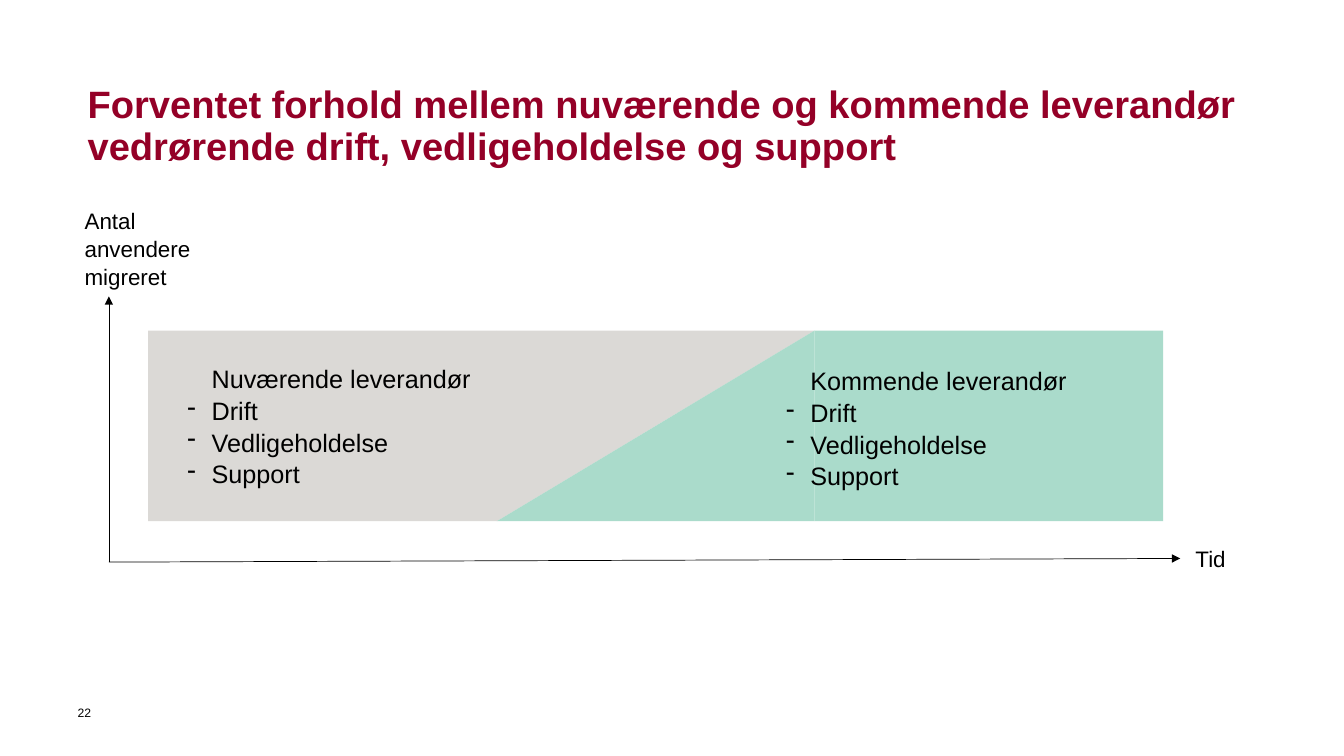
from dataclasses import dataclass

from lxml.etree import SubElement
from pptx import Presentation
from pptx.dml.color import RGBColor
from pptx.enum.shapes import MSO_CONNECTOR, MSO_SHAPE
from pptx.enum.text import MSO_ANCHOR
from pptx.oxml.ns import qn
from pptx.slide import Slide
from pptx.util import Pt

GREY, GREEN, RED, BLACK = "DBD9D6", "AADBCB", "940027", "000000"
BAND_TOP, BAND_H = 236.2, 136.1
BLOCK_W, WEDGE_W = 249.1, 226.8
BAND_LEFT = 105.8
WEDGE_LEFT = BAND_LEFT + BLOCK_W
NEXT_LEFT = WEDGE_LEFT + WEDGE_W
HANG = 17.3
SERVICES = ("Drift", "Vedligeholdelse", "Support")


@dataclass
class Area:
    shape: MSO_SHAPE
    left: float
    width: float
    color: str
    rotation: float = 0
    flip: bool = False


@dataclass
class Label:
    left: float
    top: float
    width: float
    height: float
    text: str
    size: float
    color: str = BLACK
    bold: bool = False
    spacing: float = 1.05
    items: tuple[str, ...] = ()


@dataclass
class Axis:
    x1: float
    y1: float
    x2: float
    y2: float


AREAS = [
    Area(MSO_SHAPE.RIGHT_TRIANGLE, WEDGE_LEFT, WEDGE_W, GREY, 180, True),
    Area(MSO_SHAPE.RIGHT_TRIANGLE, WEDGE_LEFT, WEDGE_W, GREEN, 0, True),
    Area(MSO_SHAPE.RECTANGLE, BAND_LEFT, BLOCK_W, GREY),
    Area(MSO_SHAPE.RECTANGLE, NEXT_LEFT, BLOCK_W, GREEN),
]
AXES = [Axis(77.8, 401.5, 843.1, 398.9), Axis(77.8, 401.5, 77.8, 211.7)]
LABELS = [
    Label(62.6, 60, 836, 74,
          "Forventet forhold mellem nuværende og kommende leverandør "
          "vedrørende drift, vedligeholdelse og support",
          27.2, RED, True, Pt(30)),
    Label(133.9, 258.5, 266.4, 87.1, "Nuværende leverandør", 18, items=SERVICES),
    Label(561.6, 259.9, 266.4, 87.1, "Kommende leverandør", 18, items=SERVICES),
    Label(60.5, 146.9, 90.7, 58.3, "Antal anvendere migreret", 16),
    Label(853.9, 388.8, 56.9, 19.4, "Tid", 16),
    Label(55.4, 504, 22.3, 21.6, "22", 8.7, spacing=1.0),
]


def rgb(color: str) -> RGBColor:
    return RGBColor.from_string(color)


def set_all(target: object, values: dict[str, object]) -> None:
    for name, value in values.items():
        setattr(target, name, value)


def draw_area(s: Slide, area: Area) -> None:
    sp = s.shapes.add_shape(area.shape, Pt(area.left), Pt(BAND_TOP),
                            Pt(area.width), Pt(BAND_H))
    sp.shadow.inherit = False
    sp.fill.solid()
    sp.fill.fore_color.rgb = rgb(area.color)
    sp.line.fill.background()
    sp.rotation = area.rotation
    if area.flip:
        sp._element.spPr.find(qn("a:xfrm")).set("flipH", "1")


def draw_axis(s: Slide, axis: Axis) -> None:
    cxn = s.shapes.add_connector(MSO_CONNECTOR.STRAIGHT, Pt(axis.x1), Pt(axis.y1),
                                 Pt(axis.x2), Pt(axis.y2))
    cxn.line.color.rgb = rgb(BLACK)
    cxn.line.width = Pt(0.5)
    SubElement(cxn.line._get_or_add_ln(), qn("a:tailEnd"), type="triangle")
    SubElement(cxn._element.spPr, qn("a:effectLst"))


def draw_label(s: Slide, label: Label) -> None:
    sp = s.shapes.add_textbox(Pt(label.left), Pt(label.top),
                              Pt(label.width), Pt(label.height))
    tf = sp.text_frame
    set_all(tf, {"word_wrap": True, "vertical_anchor": MSO_ANCHOR.TOP,
                 "margin_left": 0, "margin_right": 0,
                 "margin_top": 0, "margin_bottom": 0})
    for i, text in enumerate((label.text, *label.items)):
        p = tf.add_paragraph() if i else tf.paragraphs[0]
        if label.items:
            pPr = p._p.get_or_add_pPr()
            pPr.set("marL", str(Pt(HANG)))
            pPr.set("indent", str(-Pt(HANG) if i else 0))
            if i:
                SubElement(pPr, qn("a:buChar"), char="-")
        p.line_spacing = label.spacing
        r = p.add_run()
        r.text = text
        set_all(r.font, {"name": "Arial", "size": Pt(label.size), "bold": label.bold})
        r.font.color.rgb = rgb(label.color)


def main() -> None:
    prs = Presentation()
    set_all(prs, {"slide_width": Pt(960), "slide_height": Pt(540)})
    s = prs.slides.add_slide(prs.slide_layouts[6])
    for area in AREAS:
        draw_area(s, area)
    for axis in AXES:
        draw_axis(s, axis)
    for label in LABELS:
        draw_label(s, label)
    prs.save("out.pptx")


if __name__ == "__main__":
    main()
